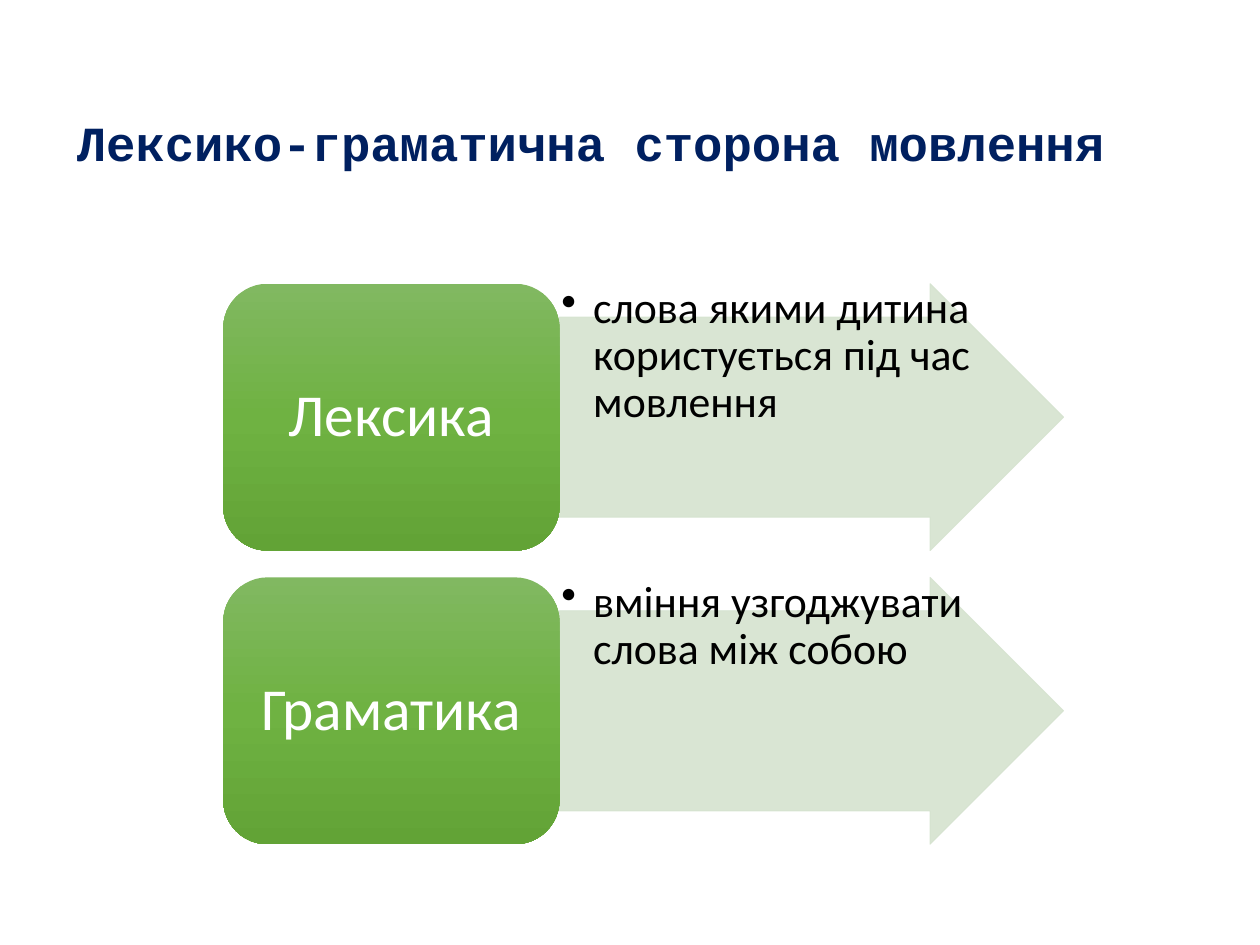
import copy

import lxml.etree
import pptx
import pptx.dml.color
import pptx.enum.shapes
import pptx.enum.text
import pptx.oxml.ns
import pptx.util

Cm = pptx.util.Cm
Pt = pptx.util.Pt
SHAPE = pptx.enum.shapes.MSO_SHAPE
ALIGN = pptx.enum.text.PP_ALIGN
ANCHOR = pptx.enum.text.MSO_ANCHOR
qn = pptx.oxml.ns.qn

TITLE = "Лексико-граматична сторона мовлення"
ROWS = [
    ("Лексика", "слова якими дитина користується під час мовлення"),
    ("Граматика", "вміння узгоджувати слова між собою"),
]
COLORS = {
    "title": "002060",
    "label": "FFFFFF",
    "body": "000000",
    "arrow": "D5E3CF",
}
GRADIENT = [(0, "81B861"), (0.5, "6FB242"), (1, "62A336")]

LEFT, TOP = 4.5, 5.72
LABEL_W, ARROW_W, ROW_H, GAP = 6.78, 10.16, 5.38, 0.54


def rgb(value):
    return pptx.dml.color.RGBColor.from_string(value)


def write(sp, text, size, color, font="Calibri", bold=False, align=ALIGN.LEFT,
          anchor=ANCHOR.TOP, inset=(0.25, 0.13), spacing=1.0, bullet=False):
    tf = sp.text_frame
    tf.word_wrap = True
    tf.vertical_anchor = anchor
    tf.margin_left = tf.margin_right = Cm(inset[0])
    tf.margin_top = tf.margin_bottom = Cm(inset[1])
    p = tf.paragraphs[0]
    p.alignment = align
    p.line_spacing = spacing
    if bullet:
        p.level = 1
        pPr = p._p.get_or_add_pPr()
        pPr.set("marL", str(Cm(0.64)))
        pPr.set("indent", str(-Cm(0.64)))
        lxml.etree.SubElement(pPr, qn("a:buChar"), char="•")
    r = p.add_run()
    r.text = text
    r.font.name = font
    r.font.size = Pt(size)
    r.font.bold = bold
    r.font.color.rgb = rgb(color)


def add_arrow(shapes, box):
    sp = shapes.add_shape(SHAPE.RIGHT_ARROW, *box)
    sp.shadow.inherit = False
    sp.adjustments[0] = 0.75
    sp.adjustments[1] = 0.5
    sp.fill.solid()
    sp.fill.fore_color.rgb = rgb(COLORS["arrow"])
    sp.line.color.rgb = rgb(COLORS["arrow"])
    sp.line.width = Pt(0.5)
    for clr in sp._element.spPr.iter(qn("a:srgbClr")):
        lxml.etree.SubElement(clr, qn("a:alpha"), val="90000")


def add_label(shapes, box):
    sp = shapes.add_shape(SHAPE.ROUNDED_RECTANGLE, *box)
    sp.shadow.inherit = False
    sp.line.fill.background()
    sp.fill.gradient()
    sp.fill.gradient_angle = 270
    stops = next(sp._element.spPr.iter(qn("a:gsLst")))
    stops.append(copy.deepcopy(stops[0]))
    for stop, (position, color) in zip(sp.fill.gradient_stops, GRADIENT):
        stop.position = position
        stop.color.rgb = rgb(color)
    return sp


def main():
    prs = pptx.Presentation()
    prs.slide_width, prs.slide_height = Cm(25.4), Cm(19.05)
    s = prs.slides.add_slide(prs.slide_layouts[6])

    title = s.shapes.add_textbox(Cm(1.3), Cm(2.13), Cm(23.01), Cm(1.45))
    write(title, TITLE, 28, COLORS["title"], font="Courier New", bold=True)

    for i, (label, body) in enumerate(ROWS):
        top = Cm(TOP + i * (ROW_H + GAP))
        arrow_box = (Cm(LEFT + LABEL_W), top, Cm(ARROW_W), Cm(ROW_H))
        add_arrow(s.shapes, arrow_box)
        write(s.shapes.add_textbox(*arrow_box), body, 25, COLORS["body"],
              inset=(0.04, 0.04), spacing=0.9, bullet=True)
        sp = add_label(s.shapes, (Cm(LEFT), top, Cm(LABEL_W), Cm(ROW_H)))
        write(sp, label, 34, COLORS["label"], align=ALIGN.CENTER,
              anchor=ANCHOR.MIDDLE, inset=(0.36, 0.18), spacing=0.9)

    prs.save("out.pptx")


if __name__ == "__main__":
    main()
